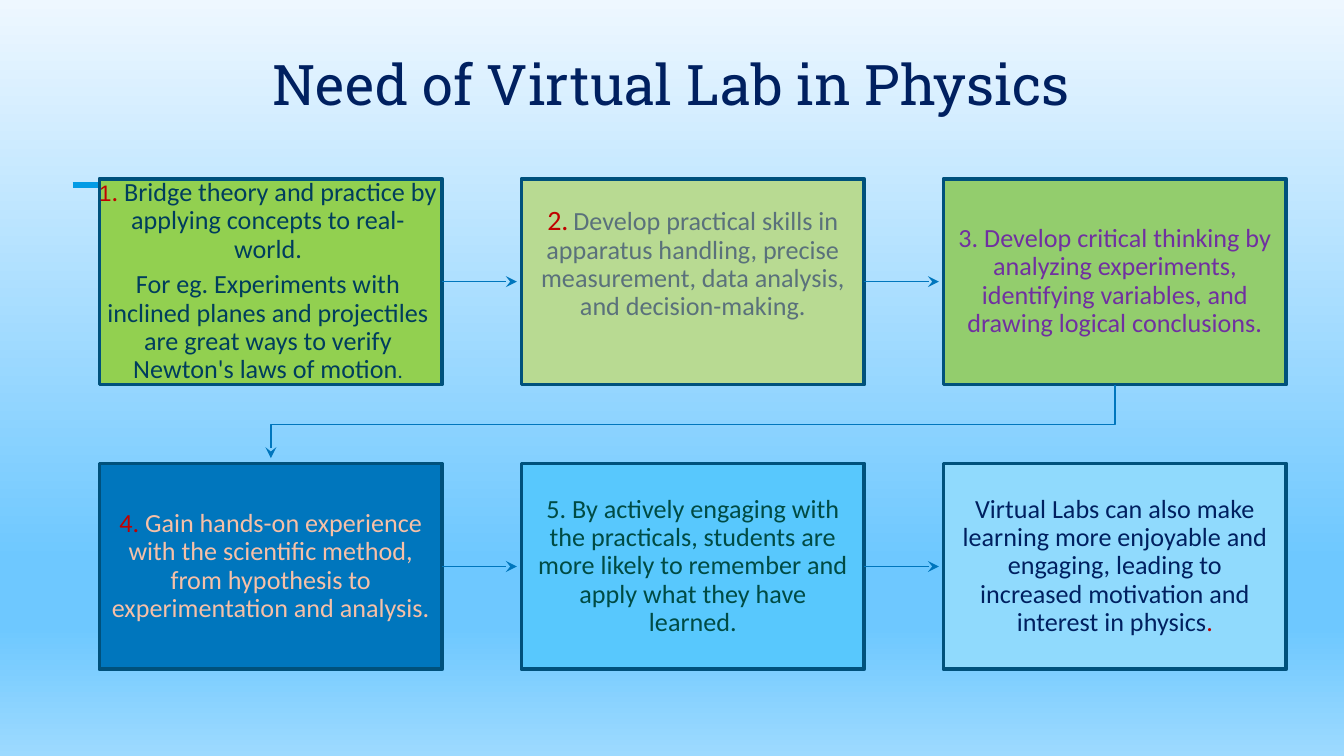
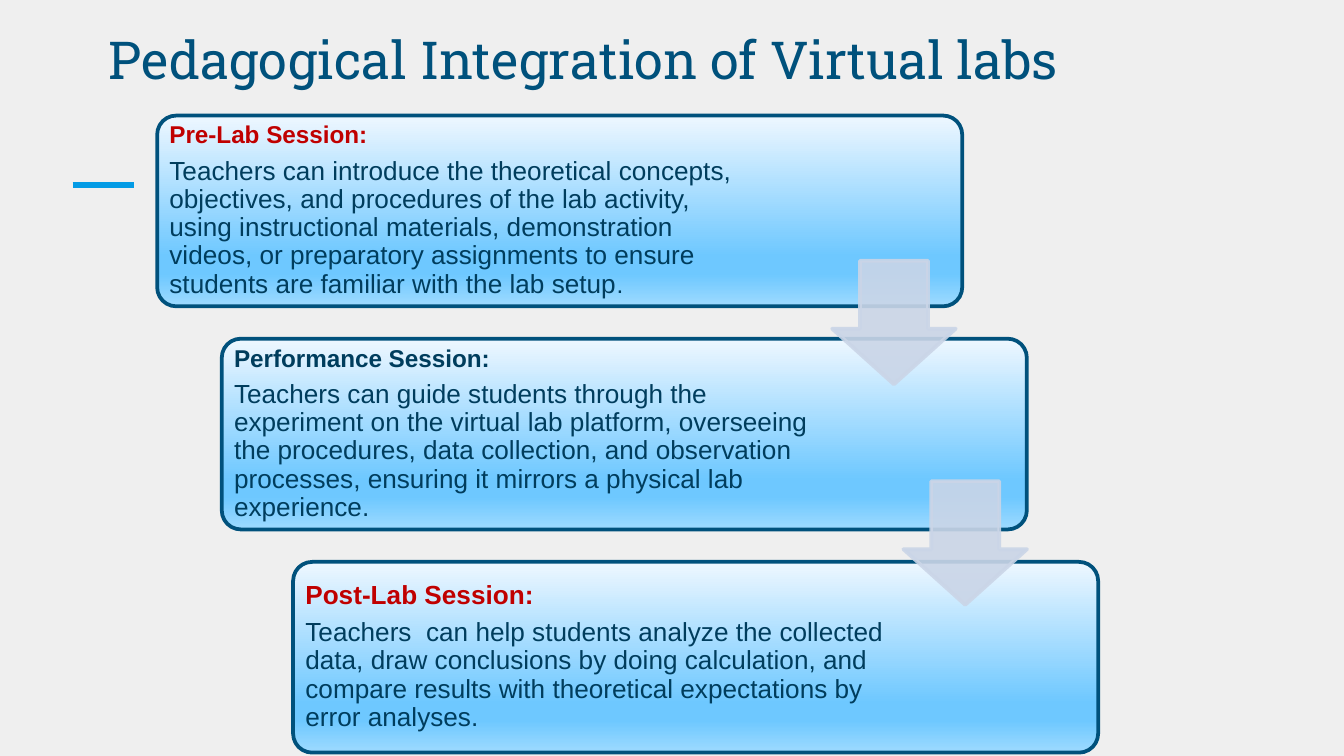
from dataclasses import dataclass

from lxml import etree
from pptx import Presentation
from pptx import util as u
from pptx.dml.color import RGBColor
from pptx.enum import shapes, text
from pptx.oxml import ns


@dataclass(frozen=True)
class Theme:
    navy: str = "002060"
    ocean: str = "00517C"
    ink: str = "003D5D"
    red: str = "C00000"
    accent: str = "039BE5"
    arrow: str = "0076BD"
    pale: str = "CAD5E7"
    paper: str = "EFEFEF"
    sky: tuple = ((0, "EEF7FF"), (74, "6EC8FF"), (83, "6EC8FF"), (100, "9DDAFF"))
    heading: str = "Roboto Slab"
    card: str = "Calibri"
    panel: str = "Arial"
    title_size: float = 30
    small_title: float = 28
    body: float = 14
    label: float = 13
    border: float = 2


THEME = Theme()


@dataclass(frozen=True)
class Box:
    left: float
    top: float
    width: float
    height: float

    @property
    def right(self):
        return self.left + self.width

    @property
    def bottom(self):
        return self.top + self.height

    @property
    def center(self):
        return self.left + self.width / 2

    @property
    def middle(self):
        return self.top + self.height / 2

    def lengths(self):
        return [u.Pt(value) for value in (self.left, self.top, self.width, self.height)]


@dataclass(frozen=True)
class Span:
    words: str
    color: str
    size: float = THEME.body
    font: str = THEME.card
    bold: bool = False


@dataclass(frozen=True)
class Card:
    fill: str
    paragraphs: list
    insets: tuple = (6.5, 6.5, 6.5, 6.5)


@dataclass(frozen=True)
class Panel:
    left: float
    heading: Span
    body: list


def panel_span(words, color=THEME.ink, size=THEME.body, bold=False):
    return Span(words, color, size, THEME.panel, bold)


CARDS = [
    Card("92D050", [
        [Span("1", THEME.red, 12, THEME.panel), Span(". ", THEME.red),
         Span("Bridge theory and practice by applying concepts to real-world.", THEME.ink)],
        [Span("For eg. Experiments with inclined planes and projectiles are great "
              "ways to verify Newton's laws of motion", THEME.ink),
         Span(".", THEME.ink, 11)],
    ], (-1, 0, 2, 0)),
    Card("B8DA92", [
        [Span("2.", THEME.red, 15), Span(" ", "5A717B", 11),
         Span("Develop practical skills in apparatus handling, precise measurement, "
              "data analysis, and decision-making.", "5A717B")],
    ], (6.5, 6.5, 6.5, 25.8)),
    Card("93CD6D", [
        [Span("3. Develop critical thinking by analyzing experiments, identifying "
              "variables, and drawing logical conclusions.", "7030A0")],
    ]),
    Card("0076BD", [
        [Span("4. ", THEME.red),
         Span("Gain hands-on experience with the scientific method, from hypothesis "
              "to experimentation and analysis.", "F7C0A7")],
    ]),
    Card("58C8FD", [
        [Span("5. By actively engaging with the practicals, students are more likely "
              "to remember and apply what they have learned.", "004B44")],
    ]),
    Card("90DAFD", [
        [Span("Virtual Labs can also make learning more enjoyable and engaging, "
              "leading to increased motivation and interest in physics", THEME.navy),
         Span(".", THEME.red)],
    ]),
]

PANELS = [
    Panel(0, panel_span("Pre-Lab Session:", THEME.red, THEME.label, True), [
        panel_span("Teachers can introduce the theoretical concepts, objectives, and "
                   "procedures of the lab activity, using instructional materials, "
                   "demonstration videos, or preparatory assignments to ensure students "
                   "are familiar with the lab setup"),
        panel_span(".", size=THEME.label)]),
    Panel(34.6, panel_span("Performance Session:", size=THEME.label, bold=True), [
        panel_span("Teachers can guide students through the experiment on the virtual "
                   "lab platform, overseeing the procedures, data collection, and "
                   "observation processes, ensuring it mirrors a physical lab experience.")]),
    Panel(72.8, panel_span("Post-Lab Session:", THEME.red, bold=True), [
        panel_span("Teachers  can help students analyze the collected data, draw "
                   "conclusions by doing calculation, and compare results with "
                   "theoretical expectations by error analyses.")]),
]


def rgb(color):
    return RGBColor.from_string(color)


def sky_gradient(fill, element):
    fill.gradient()
    fill.gradient_angle = 270
    stops = next(element.iter(ns.qn("a:gsLst")))
    for stop in list(stops):
        stops.remove(stop)
    for position, color in THEME.sky:
        stop = etree.SubElement(stops, ns.qn("a:gs"), pos=str(position * 1000))
        etree.SubElement(stop, ns.qn("a:srgbClr"), val=color)


def stroke(line, color, width, arrow=False):
    line.color.rgb = rgb(color)
    line.width = u.Pt(width)
    if arrow:
        etree.SubElement(line._get_or_add_ln(), ns.qn("a:tailEnd"), type="stealth")


def write(frame, paragraphs, align, insets, anchor, line_spacing=None, gap=0):
    frame.word_wrap = True
    frame.auto_size = text.MSO_AUTO_SIZE.NONE
    frame.vertical_anchor = anchor
    (frame.margin_left, frame.margin_top,
     frame.margin_right, frame.margin_bottom) = [u.Pt(inset) for inset in insets]
    for index, spans in enumerate(paragraphs):
        para = frame.add_paragraph() if index else frame.paragraphs[0]
        para.alignment = align
        para.line_spacing = line_spacing
        para.space_before = u.Pt(gap if index else 0)
        for span in spans:
            run = para.add_run()
            run.text = span.words
            run.font.name = span.font
            run.font.size = u.Pt(span.size)
            run.font.bold = span.bold
            run.font.color.rgb = rgb(span.color)


def add_block(page, preset, box):
    block = page.shapes.add_shape(preset, *box.lengths())
    block.shadow.inherit = False
    return block


def add_line(page, start, end, color, width, arrow=False, source=None):
    points = [u.Pt(value) for value in (*start, *end)]
    line = page.shapes.add_connector(shapes.MSO_CONNECTOR.STRAIGHT, *points)
    if source is not None:
        line.begin_connect(source, 3)
    stroke(line.line, color, width, arrow)
    etree.SubElement(line._element.spPr, ns.qn("a:effectLst"))


def add_page(deck, title, box, align):
    page = deck.slides.add_slide(deck.slide_layouts[5])
    holder = page.shapes.title
    holder.left, holder.top, holder.width, holder.height = box.lengths()
    write(holder.text_frame, [[title]], align, (7.2,) * 4, text.MSO_ANCHOR.BOTTOM)
    add_line(page, (38.9, 99), (72, 99), THEME.accent, 3)
    return page


def add_return_arrow(page, source, target):
    turn = source.bottom + 21.6
    corners = [(source.center, turn), (target.center, turn),
               (target.center, target.top - 2.9)]
    builder = page.shapes.build_freeform(u.Pt(source.center), u.Pt(source.bottom))
    builder.add_line_segments([(u.Pt(x), u.Pt(y)) for x, y in corners], close=False)
    route = builder.convert_to_shape()
    route.shadow.inherit = False
    route.fill.background()
    stroke(route.line, THEME.arrow, 0.75, arrow=True)


def add_card(page, card, box):
    block = add_block(page, shapes.MSO_SHAPE.RECTANGLE, box)
    block.fill.solid()
    block.fill.fore_color.rgb = rgb(card.fill)
    stroke(block.line, THEME.ocean, THEME.border)
    write(block.text_frame, card.paragraphs, text.PP_ALIGN.CENTER, card.insets,
          text.MSO_ANCHOR.MIDDLE, 0.9, 3.9)
    return block


def add_card_flow(page, area, columns=3, gap_x=42.5, gap_y=42.4):
    rows = len(CARDS) // columns
    width = (area.width - gap_x * (columns - 1)) / columns
    height = (area.height - gap_y * (rows - 1)) / rows
    boxes = [Box(area.left + index % columns * (width + gap_x),
                 area.top + index // columns * (height + gap_y), width, height)
             for index in range(len(CARDS))]
    for index, (card, box) in enumerate(zip(CARDS, boxes)):
        block = add_card(page, card, box)
        if (index + 1) % columns:
            add_line(page, (box.right, box.middle), (box.right + 40, box.middle),
                     THEME.arrow, 0.75, arrow=True, source=block)
        elif index + 1 < len(CARDS):
            add_return_arrow(page, box, boxes[index + 1])


def add_panel(page, panel, box):
    block = add_block(page, shapes.MSO_SHAPE.ROUNDED_RECTANGLE, box)
    block.adjustments[0] = 0.1
    sky_gradient(block.fill, block._element)
    stroke(block.line, THEME.ocean, THEME.border)
    write(block.text_frame, [[panel.heading], panel.body], text.PP_ALIGN.LEFT,
          (3.6, 3.6, 108, 3.6), text.MSO_ANCHOR.MIDDLE, 0.9, 4.5)


def add_step_arrow(page, box):
    block = add_block(page, shapes.MSO_SHAPE.DOWN_ARROW, box)
    block.adjustments[0] = 0.55
    block.adjustments[1] = 0.45
    block.fill.solid()
    block.fill.fore_color.rgb = rgb(THEME.pale)
    stroke(block.line, THEME.pale, THEME.border)
    for color in block._element.spPr.iter(ns.qn("a:srgbClr")):
        etree.SubElement(color, ns.qn("a:alpha"), val="90000")


def add_staircase(page, area, width=431.3, height=102.2):
    step = (area.height - height) / (len(PANELS) - 1)
    for index, panel in enumerate(PANELS):
        add_panel(page, panel, Box(area.left + panel.left, area.top + index * step,
                                   width, height))
    for index, panel in enumerate(PANELS[1:]):
        add_step_arrow(page, Box(area.left + panel.left + 327,
                                 area.top + 77.8 + index * 118.1, 66.2, 66.2))


def need_slide(deck):
    title = Span("Need of Virtual Lab in Physics", THEME.navy, THEME.title_size, THEME.heading)
    page = add_page(deck, title, Box(30.2, 15.8, 658.8, 54), text.PP_ALIGN.CENTER)
    sky_gradient(page.background.fill, page._element)
    add_card_flow(page, Box(53.3, 95.8, 635.8, 262.8))


def integration_slide(deck):
    title = Span("Pedagogical Integration of Virtual labs", THEME.ocean,
                 THEME.small_title, THEME.heading)
    page = add_page(deck, title, Box(51.1, 1.4, 567.4, 54), text.PP_ALIGN.LEFT)
    page.background.fill.solid()
    page.background.fill.fore_color.rgb = rgb(THEME.paper)
    add_staircase(page, Box(84.2, 61.9, 504.1, 341.3))


def main():
    deck = Presentation()
    deck.slide_width, deck.slide_height = u.Pt(720), u.Pt(405)
    need_slide(deck)
    integration_slide(deck)
    deck.save("out.pptx")


if __name__ == "__main__":
    main()
